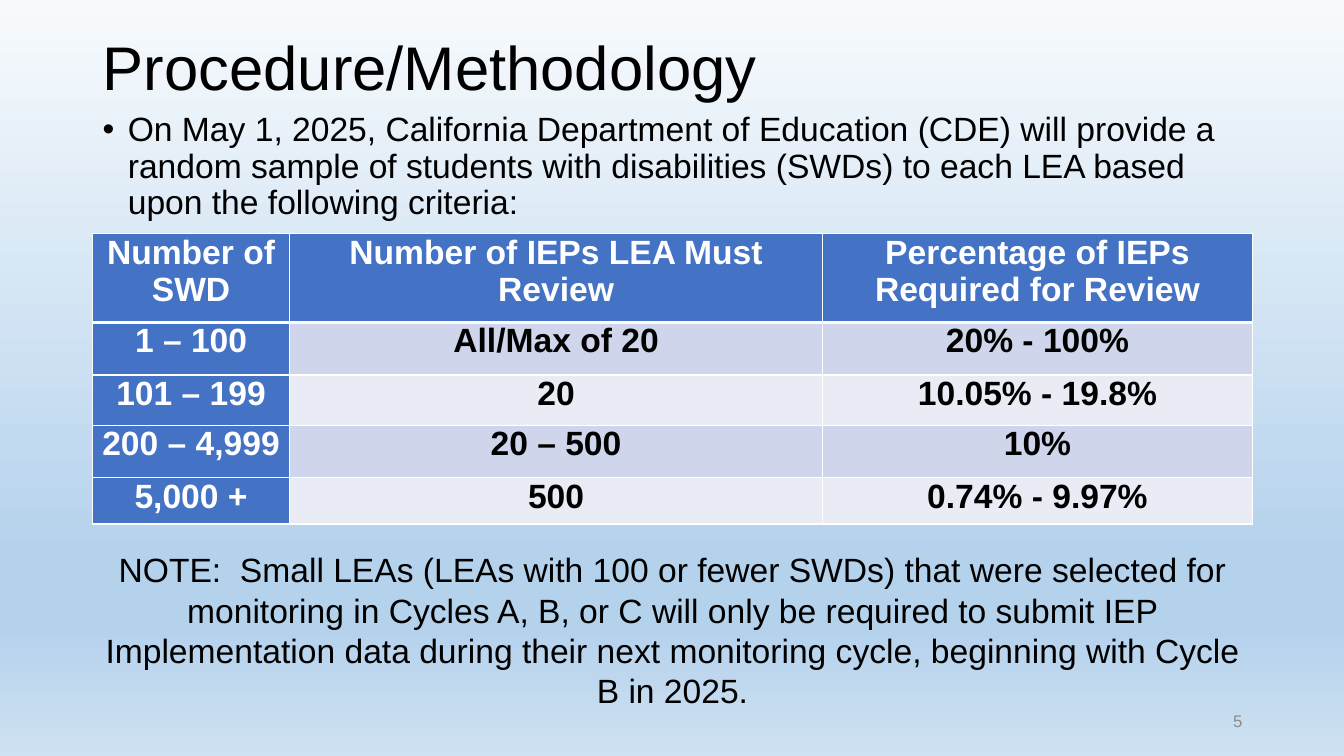
from pptx import Presentation
from pptx.dml.color import RGBColor
from pptx.enum.text import MSO_ANCHOR, PP_ALIGN
from pptx.oxml.ns import qn
from pptx.util import Inches, Pt
from lxml import etree

LEFT, MID, RIGHT = PP_ALIGN.LEFT, PP_ALIGN.CENTER, PP_ALIGN.RIGHT
TOP, CENTRE = MSO_ANCHOR.TOP, MSO_ANCHOR.MIDDLE

# Content
TITLE = "Procedure/Methodology"
INTRO = ("On May 1, 2025, California Department of Education (CDE) will provide a "
         "random sample of students with disabilities (SWDs) to each LEA based "
         "upon the following criteria:")
ROWS = [
    ("Number of SWD", "Number of IEPs LEA Must Review",
     "Percentage of IEPs Required for Review"),
    ("1 – 100", "All/Max of 20", "20% - 100%"),
    ("101 – 199", "20", "10.05% - 19.8%"),
    ("200 – 4,999", "20 – 500", "10%"),
    ("5,000 +", "500", "0.74% - 9.97%"),
]
NOTE = ("NOTE:  Small LEAs (LEAs with 100 or fewer SWDs) that were selected for "
        "monitoring in Cycles A, B, or C will only be required to submit IEP "
        "Implementation data during their next monitoring cycle, beginning with "
        "Cycle B in 2025.")
PAGE = "5"

# Layout and colours
X, W = 0.92, 11.5
COLS = [1.95, 5.29, 4.26]
HIGH = [0.88, 0.52, 0.5, 0.52, 0.46]
SKY = [(0, "F7FAFD"), (74, "B5D2EC"), (83, "B5D2EC"), (100, "CEE1F2")]
BLUE, BANDS = "4472C4", ["E9EBF5", "CFD5EA"]
BLACK, WHITE, GREY = "000000", "FFFFFF", "8C8C8C"


def paint(target, color):
    target.rgb = RGBColor.from_string(color)


def write(frame, text, size=24, color=BLACK, bold=False, align=LEFT,
          space=None, before=0, bullet=False):
    frame.word_wrap = True
    para = frame.paragraphs[0]
    para.alignment = align
    para.space_before = Pt(before)
    if space:
        para.line_spacing = space
    run = para.add_run()
    run.text = text
    run.font.name, run.font.size, run.font.bold = "Arial", Pt(size), bold
    paint(run.font.color, color)
    if bullet:
        props = para._p.get_or_add_pPr()
        props.set("marL", str(Inches(0.25)))
        props.set("indent", str(Inches(-0.25)))
        etree.SubElement(props, qn("a:buFont")).set("typeface", "Arial")
        etree.SubElement(props, qn("a:buChar")).set("char", "•")


def add_box(slide, text, x, y, w, h, anchor=TOP, **form):
    frame = slide.shapes.add_textbox(
        Inches(x), Inches(y), Inches(w), Inches(h)).text_frame
    frame.vertical_anchor = anchor
    write(frame, text, **form)


def add_stop(stops, pos, color):
    stop = etree.SubElement(stops, qn("a:gs"))
    stop.set("pos", str(pos * 1000))
    etree.SubElement(stop, qn("a:srgbClr")).set("val", color)


def add_edge(cell, side, width):
    props = cell._tc.get_or_add_tcPr()
    line = etree.Element(qn("a:" + side))
    line.set("w", str(Pt(width)))
    fill = etree.SubElement(line, qn("a:solidFill"))
    etree.SubElement(fill, qn("a:srgbClr")).set("val", WHITE)
    props.insert(len(props) - 1, line)  # borders come before the fill


def fill_cell(cell, text, row, col):
    head = row == 0 or col == 0
    cell.margin_left = cell.margin_right = Inches(0.07)
    cell.margin_top = cell.margin_bottom = 0
    cell.fill.solid()
    paint(cell.fill.fore_color, BLUE if head else BANDS[row % 2])
    write(cell.text_frame, text, color=WHITE if head else BLACK,
          bold=True, align=MID)
    for side in ("lnL", "lnR", "lnT", "lnB"):
        thick = (row, side) in ((0, "lnB"), (1, "lnT"))
        add_edge(cell, side, 3 if thick else 1)


def main():
    deck = Presentation()
    deck.slide_width, deck.slide_height = Inches(13.33), Inches(7.5)
    slide = deck.slides.add_slide(deck.slide_layouts[6])

    # Background
    back = slide.background.fill
    back.gradient()
    back.gradient_angle = 270
    stops = next(slide._element.iter(qn("a:gsLst")))
    for old in list(stops):
        stops.remove(old)
    for pos, color in SKY:
        add_stop(stops, pos, color)

    # Title and introduction
    add_box(slide, TITLE, X, 0.2, W, 0.99, CENTRE, size=44, space=0.9)
    add_box(slide, INTRO, X, 1.07, W, 1.2, space=0.9, before=10, bullet=True)

    # Table
    table = slide.shapes.add_table(
        len(ROWS), len(COLS), Inches(X), Inches(2.32),
        Inches(W), Inches(sum(HIGH))).table
    for col, width in enumerate(COLS):
        table.columns[col].width = Inches(width)
    for row, texts in enumerate(ROWS):
        table.rows[row].height = Inches(HIGH[row])
        for col, text in enumerate(texts):
            fill_cell(table.cell(row, col), text, row, col)

    # Note and page number
    add_box(slide, NOTE, X, 5.4, W, 1.72, align=MID)
    add_box(slide, PAGE, 9.42, 6.95, 3, 0.4, CENTRE,
            size=12, color=GREY, align=RIGHT)

    deck.save("out.pptx")


if __name__ == "__main__":
    main()
